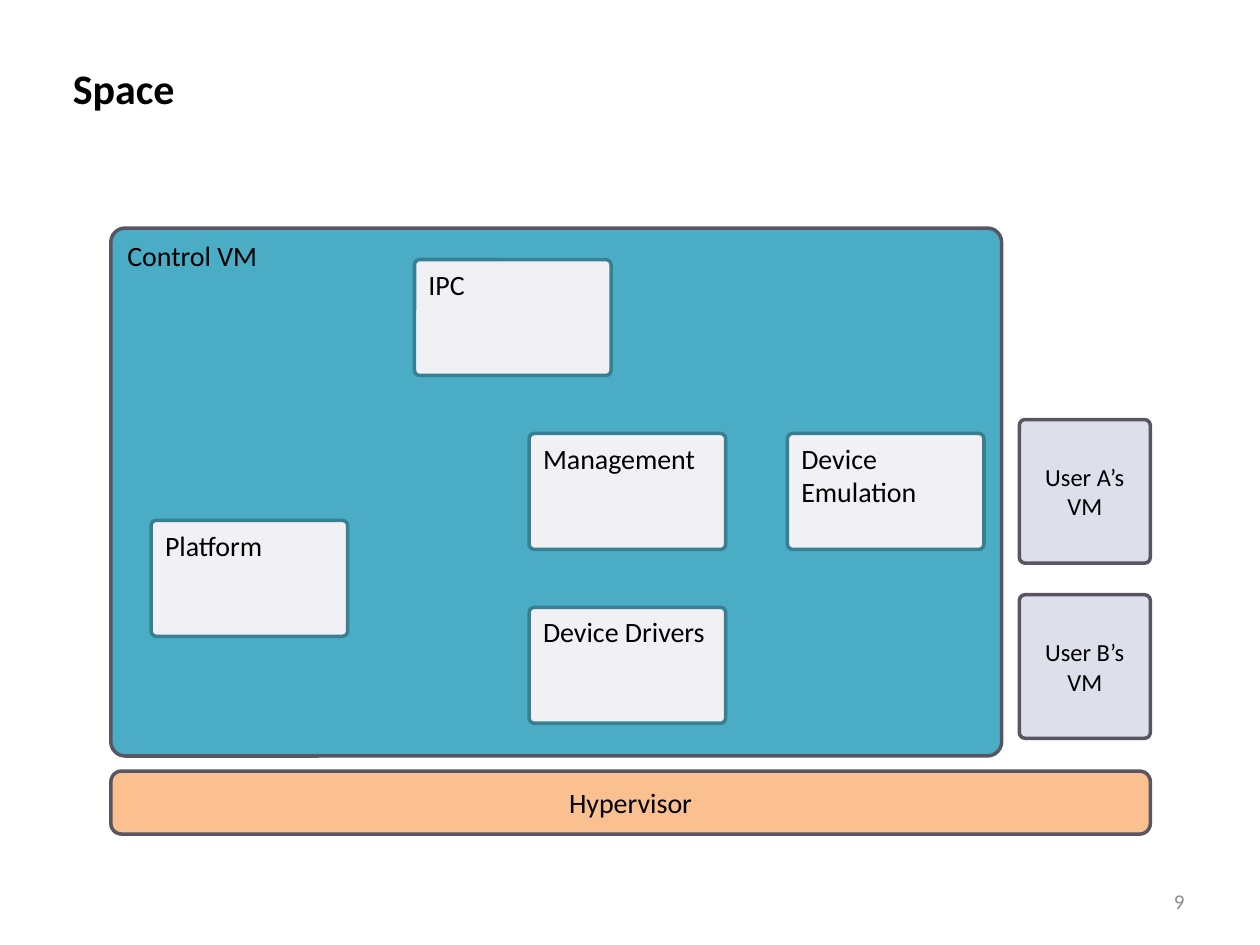
from pptx import Presentation
from pptx.dml.color import RGBColor
from pptx.enum.shapes import MSO_SHAPE as Shape
from pptx.enum.text import MSO_ANCHOR as Anchor, PP_ALIGN as Align
from pptx.util import Inches, Pt

FONT = "Calibri"
COLORS = {
    "text": "000000",
    "page_number": "8C8C8C",
    "border": "595562",
    "control": "4BACC6",
    "module": "F1F1F5",
    "module_border": "377F92",
    "user": "DDDFEA",
    "hypervisor": "FAC090",
}

LEFT, RIGHT = 0.88, 9.13
CONTROL_TOP, CONTROL_W, CONTROL_H = 1.81, 7.07, 4.19
MODULE_W, MODULE_H = 1.56, 0.92
MODULE_TOP, MODULE_STEP = 2.06, 0.69
USER_W, USER_H = 1.04, 1.14
USER_TOP, USER_STEP = 3.33, 1.39
SMALL_CORNER = 0.044

# Label, left edge, row of the module grid
MODULES = [
    ("Platform", 1.2, 3),
    ("Device Drivers", 4.2, 4),
    ("Management", 4.2, 2),
    ("IPC", 3.29, 0),
    ("Device\nEmulation", 6.25, 2),
]
USERS = ["User A’s VM", "User B’s VM"]


def color(name):
    return RGBColor.from_string(COLORS[name])


def write(frame, text, size, align, anchor, tint="text", bold=False):
    """Fill a text frame with one paragraph, one run for each line."""
    frame.word_wrap = True
    frame.vertical_anchor = anchor
    paragraph = frame.paragraphs[0]
    paragraph.alignment = align
    for index, line in enumerate(text.split("\n")):
        if index:
            paragraph.add_line_break()
        run = paragraph.add_run()
        run.text = line
        run.font.name = FONT
        run.font.size = Pt(size)
        run.font.bold = bold
        run.font.color.rgb = color(tint)


def add_label(slide, box, text, size, align, anchor, **style):
    label = slide.shapes.add_textbox(*map(Inches, box))
    write(label.text_frame, text, size, align, anchor, **style)


def add_block(slide, box, text, fill, border="border", corner=SMALL_CORNER,
              size=16, centred=False):
    block = slide.shapes.add_shape(Shape.ROUNDED_RECTANGLE, *map(Inches, box))
    block.adjustments[0] = corner
    block.shadow.inherit = False
    block.fill.solid()
    block.fill.fore_color.rgb = color(fill)
    block.line.color.rgb = color(border)
    block.line.width = Pt(2)
    align, anchor = ((Align.CENTER, Anchor.MIDDLE) if centred
                     else (Align.LEFT, Anchor.TOP))
    write(block.text_frame, text, size, align, anchor)


def add_user_vms(slide):
    for row, user in enumerate(USERS):
        box = (RIGHT - USER_W, USER_TOP + row * USER_STEP, USER_W, USER_H)
        add_block(slide, box, user, "user", size=14, centred=True)


def add_modules(slide):
    for name, left, row in MODULES:
        box = (left, MODULE_TOP + row * MODULE_STEP, MODULE_W, MODULE_H)
        add_block(slide, box, name, "module", border="module_border")


def main():
    deck = Presentation()
    deck.slide_width, deck.slide_height = Inches(10), Inches(7.5)
    slide = deck.slides.add_slide(deck.slide_layouts[6])

    add_label(slide, (7.17, 6.95, 2.33, 0.4), "9", 12,
              Align.RIGHT, Anchor.MIDDLE, tint="page_number")
    add_block(slide, (LEFT, 6.12, RIGHT - LEFT, 0.5), "Hypervisor",
              "hypervisor", corner=0.17, centred=True)
    add_block(slide, (LEFT, CONTROL_TOP, CONTROL_W, CONTROL_H), "Control VM",
              "control", corner=0.027)
    add_user_vms(slide)
    add_modules(slide)
    add_label(slide, (0.48, 0.45, 4.5, 1.63), "Space", 24,
              Align.LEFT, Anchor.TOP, bold=True)

    deck.save("out.pptx")


if __name__ == "__main__":
    main()
